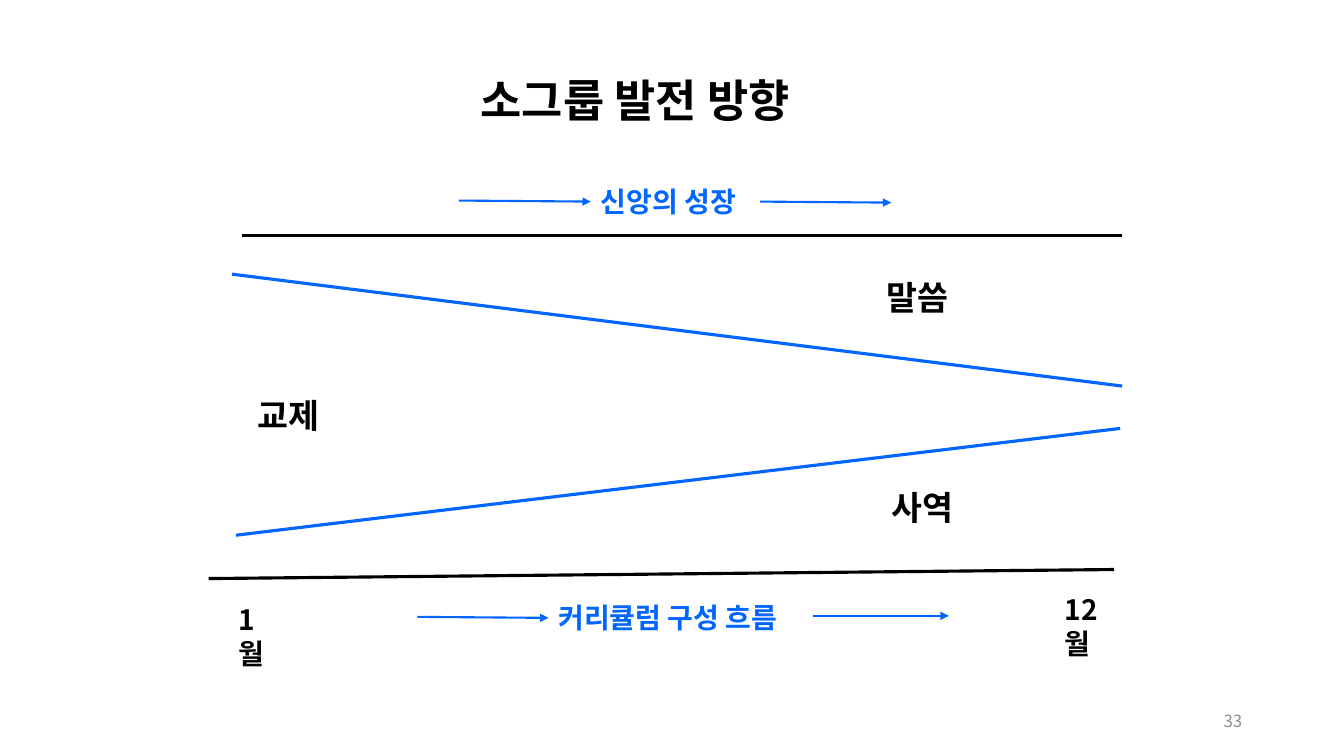
import pptx
import pptx.dml.color
import pptx.enum.shapes
import pptx.enum.text
import pptx.oxml.ns
import pptx.util
from lxml import etree

FONT = "Noto Sans CJK KR"
BLACK, BLUE, GRAY = "000000", "0066FF", "8C8C8C"
ALIGN = pptx.enum.text.PP_ALIGN
ANCHOR = pptx.enum.text.MSO_ANCHOR

# Slide grid: square cells, 133.3 columns by 75 rows
CELL = pptx.util.Inches(0.1)
deck = pptx.Presentation()
deck.slide_width, deck.slide_height = int(133.3 * CELL), 75 * CELL
page = deck.slides.add_slide(deck.slide_layouts[5])


def write(text, column, row, columns, rows, box=None, size=20, color=BLACK,
          bold=True, align=ALIGN.LEFT, anchor=ANCHOR.TOP, wrap=False):
    place = [int(cells * CELL) for cells in (column, row, columns, rows)]
    if box is None:
        box = page.shapes.add_textbox(*place)
    box.left, box.top, box.width, box.height = place
    frame = box.text_frame
    frame.word_wrap = wrap
    frame.vertical_anchor = anchor
    para = frame.paragraphs[0]
    para.alignment = align
    span = para.add_run()
    span.text = text
    span.font.name, span.font.size, span.font.bold = FONT, pptx.util.Pt(size), bold
    span.font.color.rgb = pptx.dml.color.RGBColor.from_string(color)
    # East Asian typeface for the Korean letters
    properties = span.font._element
    etree.SubElement(properties, pptx.oxml.ns.qn("a:ea"), typeface=FONT)


def draw_line(start, end, color=BLACK, width=2.25, arrow=False):
    line = page.shapes.add_connector(
        pptx.enum.shapes.MSO_CONNECTOR.STRAIGHT,
        *[int(cells * CELL) for cells in start + end])
    line.line.width = pptx.util.Pt(width)
    line.line.color.rgb = pptx.dml.color.RGBColor.from_string(color)
    if arrow:
        etree.SubElement(line.line._get_or_add_ln(),
                         pptx.oxml.ns.qn("a:tailEnd"), type="triangle")
    etree.SubElement(line._element.spPr, pptx.oxml.ns.qn("a:effectLst"))


# Title and page number
write("소그룹 발전 방향", 20.3, 5.6, 85.4, 8.5, box=page.shapes.title, size=32,
      align=ALIGN.CENTER, anchor=ANCHOR.MIDDLE, wrap=True)
write("33", 94.2, 69.5, 30, 4, size=12, color=GRAY, bold=False,
      align=ALIGN.RIGHT, anchor=ANCHOR.MIDDLE, wrap=True)

# Outer borders and the narrowing wedge
for start, end, color in [
    ((24, 23.4), (111.3, 23.4), BLACK),
    ((20.7, 57.4), (110.5, 56.5), BLACK),
    ((23, 27.2), (111.3, 38.3), BLUE),
    ((23.4, 53.1), (111.1, 42.5), BLUE),
]:
    draw_line(start, end, color)

# Areas of the diagram
for area, column, row in [("교제", 24.6, 38.7), ("말씀", 86.9, 27), ("사역", 87.4, 47.8)]:
    write(area, column, row, 8.8, 5, size=24)

# Months, in boxes narrow enough to break after the number
for month, column, row, columns in [("1월", 22.7, 59.3, 5.5), ("12월", 104.6, 58.3, 7)]:
    write(month, column, row, columns, 7.7, wrap=True)

# Captions of the flow
for caption, column, row, columns in [
    ("신앙의 성장", 58.6, 17.8, 17),
    ("커리큘럼 구성 흐름", 54.4, 59.1, 26.4),
]:
    write(caption, column, row, columns, 4.4, color=BLUE)

# Arrows beside the captions
for start, end in [
    ((45.5, 19.9), (58.6, 20)),
    ((75.4, 20), (88.4, 20.1)),
    ((41.4, 61.2), (54.4, 61.3)),
    ((80.6, 61.1), (94.1, 61.1)),
]:
    draw_line(start, end, BLUE, width=1.5, arrow=True)

deck.save("out.pptx")
